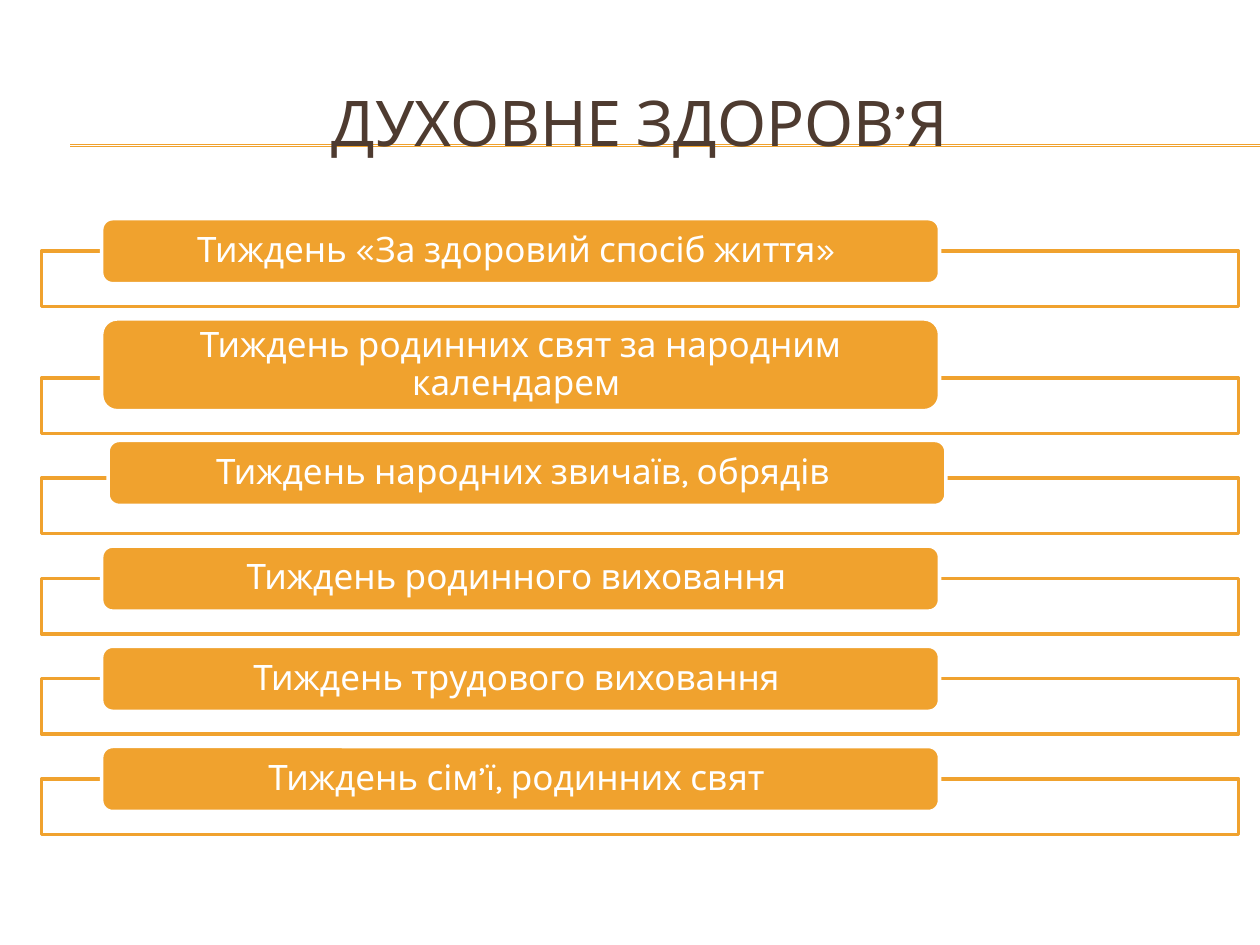
from lxml.etree import SubElement
from pptx import Presentation
from pptx.dml.color import RGBColor
from pptx.enum.shapes import MSO_CONNECTOR as Link, MSO_SHAPE as Kind
from pptx.enum.text import MSO_ANCHOR as Anchor, PP_ALIGN as Align
from pptx.oxml.ns import qn
from pptx.util import Cm, Pt

GOLD = RGBColor(0xF0, 0xA2, 0x2E)
BROWN = RGBColor(0x4E, 0x3B, 0x30)
WHITE = RGBColor(0xFF, 0xFF, 0xFF)

LEFT, WIDE, TALL = 0.84, 24.13, 1.12    # frames
BAR_X, BAR_W, BAR_H = 2.05, 16.89, 1.31
DIP = 0.66                              # how far a bar reaches into its frame
STEP = 2.02                             # frame to frame, for one-line bars

# text, bar height, shift of the bar right and down
WEEKS = [
    ("Тиждень «За здоровий спосіб життя» ", BAR_H, 0, 0),
    ("Тиждень родинних свят за народним календарем ", 1.85, 0, 0),
    ("Тиждень народних звичаїв, обрядів ", BAR_H, 0.13, -0.11),
    ("Тиждень родинного виховання ", BAR_H, 0, 0),
    ("Тиждень трудового виховання ", BAR_H, 0, 0),
    ("Тиждень сім’ї, родинних свят ", BAR_H, 0, 0),
]


def put(obj, style):
    for name, value in style.items():
        setattr(obj, name, value)


class Deck:
    face = "Karla"

    def __init__(self):
        self.prs = Presentation()
        put(self.prs, {"slide_width": Cm(25.4), "slide_height": Cm(19.05)})
        self.slide = self.prs.slides.add_slide(self.prs.slide_layouts[6])
        self.shapes = self.slide.shapes

    def rule(self, x, y, end):
        line = self.shapes.add_connector(
            Link.STRAIGHT, Cm(x), Cm(y), Cm(end), Cm(y))
        line.line.color.rgb = GOLD
        line.line.width = Pt(0.75)
        SubElement(line._element.spPr, qn("a:effectLst"))

    def label(self, shape, text, size, color, pad, gap):
        """Set centred text; pad gives the side and top insets in cm."""
        side, top = map(Cm, pad)
        frame = shape.text_frame
        put(frame, {"word_wrap": True, "vertical_anchor": Anchor.MIDDLE,
                    "margin_left": side, "margin_right": side,
                    "margin_top": top, "margin_bottom": top})
        para = frame.paragraphs[0]
        put(para, {"alignment": Align.CENTER, "line_spacing": gap})
        run = para.add_run()
        run.text = text
        put(run.font, {"name": self.face, "size": Pt(size)})
        run.font.color.rgb = color

    def title(self, text, x, y, w, h):
        box = self.shapes.add_textbox(Cm(x), Cm(y), Cm(w), Cm(h))
        self.label(box, text, 36, BROWN, (0.25, 0.13), 1.0)

    def box(self, kind, x, y, w, h, fill, edge):
        shape = self.shapes.add_shape(kind, Cm(x), Cm(y), Cm(w), Cm(h))
        shape.shadow.inherit = False
        shape.fill.solid()
        shape.fill.fore_color.rgb = fill
        shape.line.color.rgb = edge
        shape.line.width = Pt(2)
        return shape

    def frame(self, y):
        shape = self.box(Kind.RECTANGLE, LEFT, y, WIDE, TALL, WHITE, GOLD)
        tone = shape._element.spPr.find(qn("a:solidFill"))[0]
        SubElement(tone, qn("a:alpha"), val="90000")

    def bar(self, text, x, y, h):
        shape = self.box(Kind.ROUNDED_RECTANGLE, x, y, BAR_W, h, GOLD, WHITE)
        shape.adjustments[0] = 0.17
        self.label(shape, text, 20, WHITE, (0.71, 0.08), 0.9)


def main():
    deck = Deck()
    for y in (2.92, 2.95):
        deck.rule(1.42, y, 25.4)
    deck.title("ДУХОВНЕ ЗДОРОВ’Я", LEFT, 1.27, WIDE, 2.34)

    y = 5.06 - STEP
    for text, h, right, down in WEEKS:
        y += STEP + h - BAR_H
        deck.frame(y)
        deck.bar(text, BAR_X + right, y + DIP - h + down, h)
    deck.prs.save("out.pptx")


if __name__ == "__main__":
    main()
